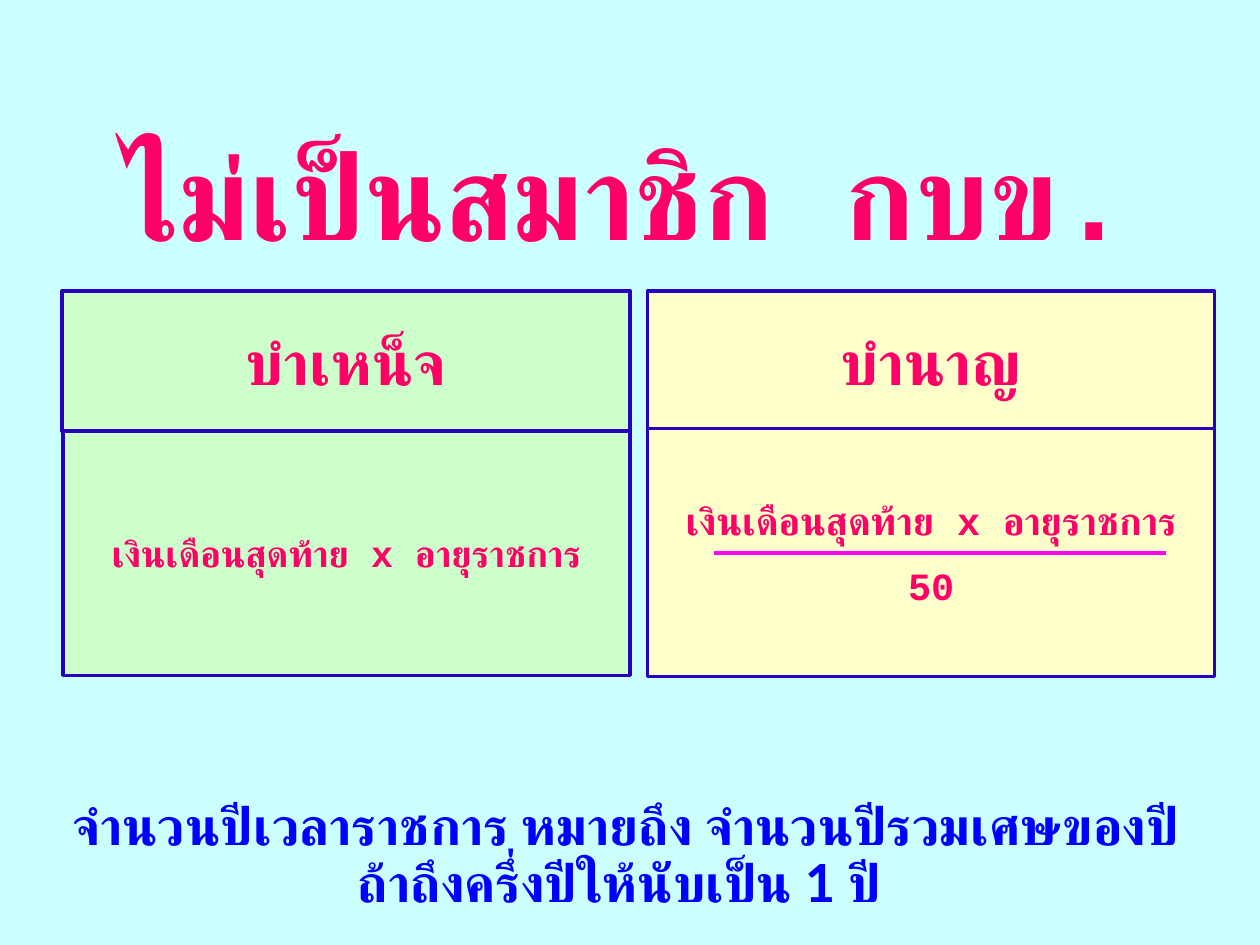
from lxml import etree
from pptx import Presentation
from pptx.dml.color import RGBColor
from pptx.enum import shapes, text
from pptx.oxml.ns import qn
from pptx.util import Inches, Pt

BACKGROUND = RGBColor(0xCC, 0xFF, 0xFF)
GREEN = RGBColor(0xCD, 0xFF, 0xCD)
YELLOW = RGBColor(0xFF, 0xFF, 0xCC)
BORDER = RGBColor(0x26, 0x02, 0xBE)
PINK = RGBColor(0xFF, 0x00, 0x66)
MAGENTA = RGBColor(0xFF, 0x00, 0xFF)
BLUE = RGBColor(0x00, 0x00, 0xFF)

FORMULA = "เงินเดือนสุดท้าย x อายุราชการ"


def write_text(shape, lines, size, color=PINK, font="Courier New", gap=0, spacing=None):
    """Write centred bold lines, with gap points between them."""
    frame = shape.text_frame
    frame.word_wrap = True
    frame.vertical_anchor = text.MSO_ANCHOR.MIDDLE
    for index, line in enumerate(lines):
        paragraph = frame.add_paragraph() if index else frame.paragraphs[0]
        paragraph.alignment = text.PP_ALIGN.CENTER
        if index:
            paragraph.space_before = Pt(gap)
        if spacing:
            paragraph.line_spacing = spacing
        run = paragraph.add_run()
        run.text = line
        run.font.name = font
        run.font.size = Pt(size)
        run.font.bold = True
        run.font.color.rgb = color
        # Thai letters take the complex-script font
        etree.SubElement(run.font._element, qn("a:cs"), typeface=font)


def add_heading(slide, box, line, size, **style):
    heading = slide.shapes.add_textbox(*map(Inches, box))
    write_text(heading, [line], size, **style)


def add_cell(slide, box, fill, lines, size, **style):
    cell = slide.shapes.add_shape(shapes.MSO_SHAPE.RECTANGLE, *map(Inches, box))
    cell.shadow.inherit = False
    cell.fill.solid()
    cell.fill.fore_color.rgb = fill
    cell.line.color.rgb = BORDER
    cell.line.width = Pt(2)
    write_text(cell, lines, size, **style)


def add_fraction_bar(slide, left, right, top):
    bar = slide.shapes.add_connector(
        shapes.MSO_CONNECTOR.STRAIGHT, Inches(left), Inches(top), Inches(right), Inches(top))
    bar.line.color.rgb = MAGENTA
    bar.line.width = Pt(2)
    etree.SubElement(bar._element.spPr, qn("a:effectLst"))


def add_benefit(slide, header_box, formula_box, fill, name, formula, size):
    """One column: benefit name above its formula."""
    add_cell(slide, header_box, fill, [name], 35)
    add_cell(slide, formula_box, fill, formula, size, gap=11)


def main():
    presentation = Presentation()
    presentation.slide_width = Inches(10)
    presentation.slide_height = Inches(7.5)
    slide = presentation.slides.add_slide(presentation.slide_layouts[6])
    slide.background.fill.solid()
    slide.background.fill.fore_color.rgb = BACKGROUND

    # Heading
    add_heading(slide, (0.72, 0.73, 8.5, 1.61), "ไม่เป็นสมาชิก กบข.", 68)

    # Lump sum and pension columns
    add_benefit(slide, (0.49, 2.31, 4.51, 1.11), (0.5, 3.42, 4.5, 1.94),
                GREEN, "บำเหน็จ", [FORMULA], 21)
    add_benefit(slide, (5.14, 2.31, 4.5, 1.11), (5.14, 3.4, 4.5, 1.97),
                YELLOW, "บำนาญ", [FORMULA, "50"], 22)
    add_fraction_bar(slide, 5.67, 9.25, 4.39)

    # Note on years of service
    add_heading(slide, (0.34, 6.34, 9.25, 0.92),
                "จํานวนปีเวลาราชการ หมายถึง จํานวนปีรวมเศษของปีถ้าถึงครึ่งปีให้นับเป็น 1 ปี ",
                30, color=BLUE, font="Lato", spacing=0.9)

    presentation.save("out.pptx")


if __name__ == "__main__":
    main()
